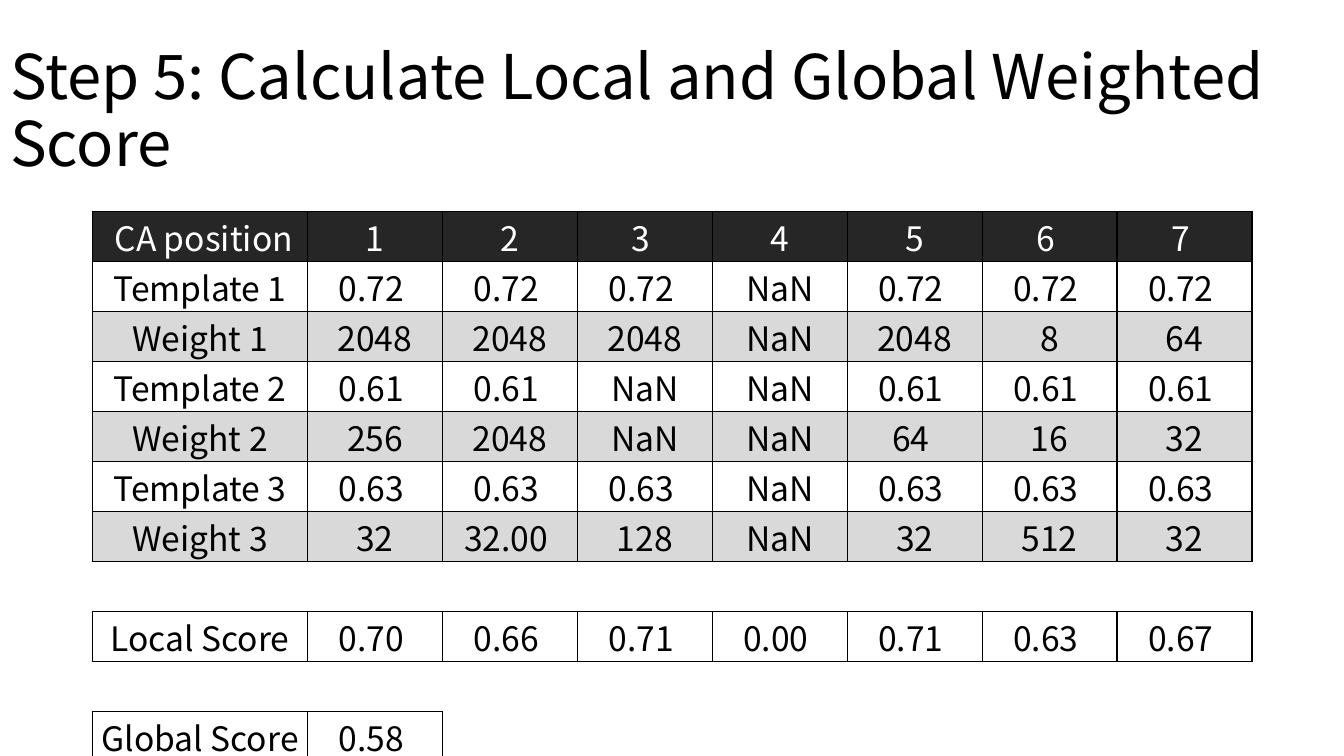
from lxml.etree import SubElement
from pptx import Presentation
from pptx.dml.color import RGBColor
from pptx.enum.text import MSO_ANCHOR, MSO_AUTO_SIZE, PP_ALIGN
from pptx.oxml.ns import qn
from pptx.util import Cm, Pt

ROWS = [line.split("|") for line in (
    " CA position|1|2|3 |4|5|6 |7 ",
    "Template 1|0.72 |0.72 |0.72 |NaN|0.72 |0.72 |0.72 ",
    "Weight 1|2048|2048|2048|NaN|2048|8|64",
    "Template 2|0.61 |0.61 |NaN|NaN|0.61 |0.61 |0.61 ",
    "Weight 2|256|2048|NaN|NaN|64 |16|32",
    "Template 3|0.63 |0.63 |0.63 |NaN|0.63 |0.63 |0.63 ",
    "Weight 3|32|32.00 |128|NaN|32|512|32",
    "|||||||",
    "Local Score|0.70 |0.66 |0.71 |0.00 |0.71 |0.63 |0.67 ",
    "|||||||",
    "Global Score|0.58 ||||||",
)]


def color(code):
    return RGBColor.from_string(code)


def apply(item, style):
    for name, value in style.items():
        setattr(item, name, value)


class Page:
    font = "Noto Sans CJK SC"
    black, white, dark, gray = "000000", "FFFFFF", "262626", "D9D9D9"
    cell_style = {
        "vertical_anchor": MSO_ANCHOR.BOTTOM,
        "margin_left": Cm(0.03), "margin_right": Cm(0.03),
        "margin_top": Cm(0.03), "margin_bottom": 0,
    }

    def __init__(self, deck):
        self.slide = deck.slides.add_slide(deck.slide_layouts[5])

    def label(self, para, text, size, ink, **style):
        run = para.add_run()
        run.text = text
        apply(run.font, {"name": self.font, "size": Pt(size)})
        run.font.color.rgb = color(ink)
        apply(para, style)

    def title(self, text, left, top, width, height):
        shape = self.slide.shapes.title
        apply(shape, {"left": Cm(left), "top": Cm(top),
                      "width": Cm(width), "height": Cm(height)})
        frame = shape.text_frame
        apply(frame, {"word_wrap": True, "auto_size": MSO_AUTO_SIZE.NONE,
                      "vertical_anchor": MSO_ANCHOR.MIDDLE})
        self.label(frame.paragraphs[0], text, 44, self.black,
                   alignment=PP_ALIGN.LEFT, line_spacing=0.9)

    def border(self, cell, sides):
        props = cell._tc.get_or_add_tcPr()
        for spot, (side, shown) in enumerate(sides.items()):
            line = SubElement(props, qn(f"a:ln{side}"), w=str(Pt(1)))
            if shown:
                fill = SubElement(line, qn("a:solidFill"))
                SubElement(fill, qn("a:srgbClr"), val=self.black)
            else:
                SubElement(line, qn("a:noFill"))
            props.insert(spot, line)

    def table(self, rows, left, top, widths, height):
        count = len(rows)
        grid = self.slide.shapes.add_table(
            count, len(widths), Cm(left), Cm(top),
            Cm(sum(widths)), Cm(height * count)).table
        apply(grid, {"first_row": False, "horz_banding": False})
        for col, width in zip(grid.columns, widths):
            col.width = Cm(width)
        for row in grid.rows:
            row.height = Cm(height)

        def filled(r, c):
            return 0 <= r < count and 0 <= c < len(widths) and rows[r][c] != ""

        for r, row in enumerate(rows):
            # Header is dark, weight rows are gray, the rest is clear
            back = self.dark if r == 0 else (
                self.gray if row[0].startswith("Weight") else None)
            ink = self.white if r == 0 else self.black
            for c, text in enumerate(row):
                cell = grid.cell(r, c)
                apply(cell, self.cell_style)
                if back:
                    cell.fill.solid()
                    cell.fill.fore_color.rgb = color(back)
                else:
                    cell.fill.background()
                if text:
                    self.label(cell.text_frame.paragraphs[0], text, 24, ink,
                               alignment=PP_ALIGN.CENTER)
                # An edge shows when a cell on either side of it has text
                near = {"L": (r, c - 1), "R": (r, c + 1),
                        "T": (r - 1, c), "B": (r + 1, c)}
                self.border(cell, {side: filled(r, c) or filled(*spot)
                                   for side, spot in near.items()})


def main():
    deck = Presentation()
    apply(deck, {"slide_width": Cm(33.87), "slide_height": Cm(19.05)})
    page = Page(deck)

    # Heading
    page.title("Step 5: Calculate Local and Global Weighted Score",
               0, 1.01, 33.87, 3.68)

    # Scores
    page.table(ROWS, 2.33, 5.32, [5.42] + [3.4] * 7, 1.26)

    deck.save("out.pptx")


if __name__ == "__main__":
    main()
